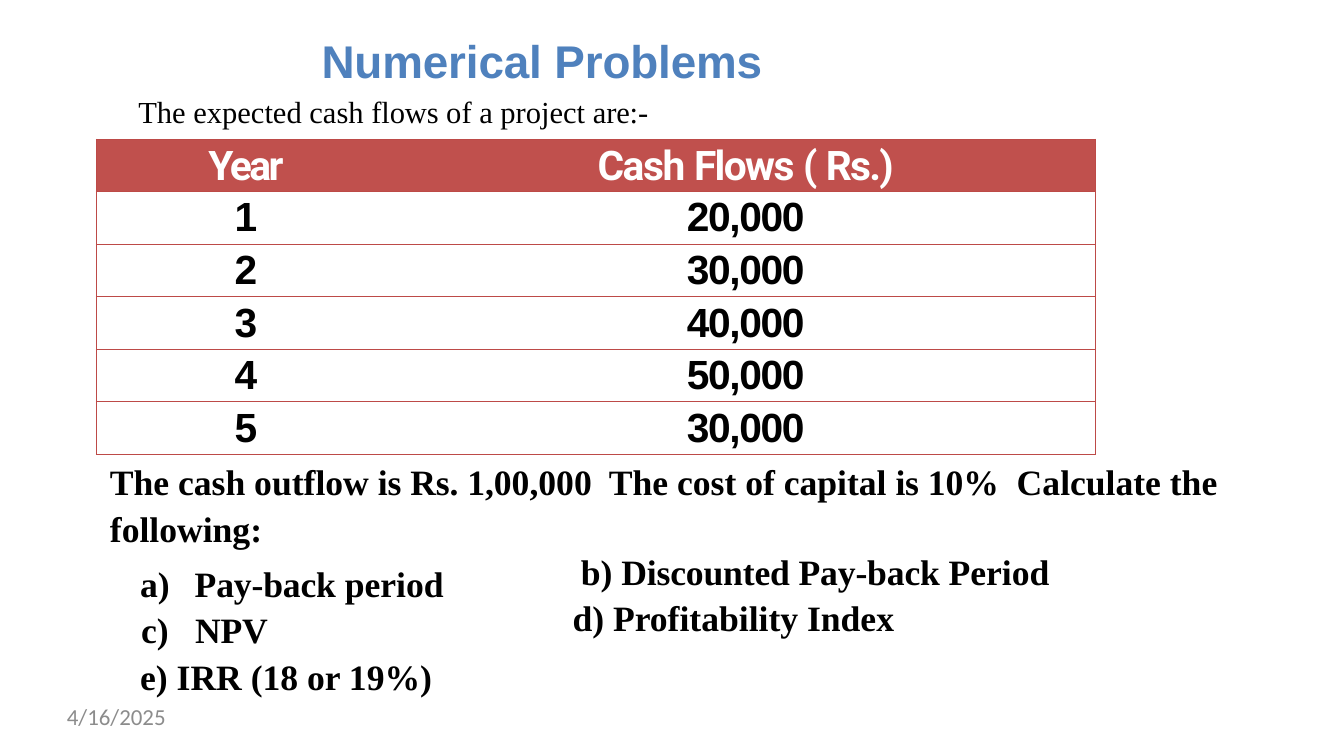
from lxml import etree
from pptx import Presentation
from pptx import util as u
from pptx.dml.color import RGBColor
from pptx.enum import text
from pptx.oxml.ns import qn

PX = 9144
COLORS = {"title": "4F81BD", "ink": "000000", "date": "8C8C8C",
          "header": "C0504D", "header_text": "FFFFFF", "rule": "BD4A47"}
SERIF = "Times New Roman"


def px(length):
    """Turn px into EMU."""
    return u.Emu(length * PX)


def add_runs(paragraph, runs, size, font, color, bold=True):
    """Add (wording, letter spacing) runs in one style."""
    for wording, spacing in runs:
        run = paragraph.add_run()
        run.text = wording
        run.font.size = u.Pt(size)
        run.font.name = font
        run.font.bold = bold
        run.font.color.rgb = RGBColor.from_string(COLORS[color])
        if spacing:
            run._r.get_or_add_rPr().set("spc", str(round(spacing * 100)))


def add_frame(slide, box, top_inset=1):
    """Add a wrapping text frame in a box and return it."""
    frame = slide.shapes.add_textbox(*map(px, box)).text_frame
    frame.word_wrap = True
    frame.margin_left = frame.margin_right = frame.margin_bottom = 0
    frame.margin_top = px(top_inset)
    return frame


def add_line(slide, box, runs, size=28, font=SERIF, color="ink", bold=True,
             line_spacing=None):
    """Place one paragraph in a box."""
    paragraph = add_frame(slide, box).paragraphs[0]
    paragraph.space_before = u.Pt(1)
    paragraph.line_spacing = line_spacing
    paragraph._p.get_or_add_pPr().set("marL", str(px(1)))
    add_runs(paragraph, runs, size, font, color, bold)


def add_tasks(slide, box):
    """Place the left column of lettered tasks."""
    frame = add_frame(slide, box, 5)
    tasks = [([("a)\t", 0), (" Pay-back ", -0.1), ("period", 0)], 3.9, 1, 0, 56),
             ([("NPV", -0.1)], 2.9, 61, -59, 61),
             ([("e) IRR (18 or 19%)", 0)], 2.9, 1, 0, 63)]
    for index, (runs, before, margin, indent, tab) in enumerate(tasks):
        task = frame.add_paragraph() if index else frame.paragraphs[0]
        task.space_before = u.Pt(before)
        props = task._p.get_or_add_pPr()
        props.set("marL", str(px(margin)))
        props.set("indent", str(px(indent)))
        if indent:
            etree.SubElement(props, qn("a:buFont"), typeface="+mj-lt")
            etree.SubElement(props, qn("a:buAutoNum"), type="alphaLcParenR", startAt="3")
        tabs = etree.SubElement(props, qn("a:tabLst"))
        etree.SubElement(tabs, qn("a:tab"), pos=str(px(tab)), algn="l")
        add_runs(task, runs, 28, SERIF, "ink")


def set_borders(cell, visible):
    """Rule the visible sides of a cell and clear the others."""
    props = cell._tc.get_or_add_tcPr()
    for index, side in enumerate("LRTB"):
        line = etree.Element(qn(f"a:ln{side}"), w=str(u.Pt(0.75)))
        if side in visible:
            fill = etree.SubElement(line, qn("a:solidFill"))
            etree.SubElement(fill, qn("a:srgbClr"), val=COLORS["rule"])
        else:
            etree.SubElement(line, qn("a:noFill"))
        props.insert(index, line)


def add_cash_flows(slide, box):
    """Place the table of yearly cash flows."""
    header = [[("Year", -2)],
              [("Cash ", -1.2), ("Flows ", -1.3), ("( ", -1.2), ("Rs.)", -1.4)]]
    flows = ["20,000", "30,000", "40,000", "50,000", "30,000"]
    rows = [header] + [[[(str(year), 0)], [(flow, -1.1)]]
                       for year, flow in enumerate(flows, 1)]
    table = slide.shapes.add_table(len(rows), 2, *map(px, box)).table
    table.first_row = table.horz_banding = False
    year_width = 327
    table.columns[0].width = px(year_width)
    table.columns[1].width = px(box[2] - year_width)
    for row, contents in enumerate(rows):
        table.rows[row].height = px(box[3] // len(rows))
        for column, runs in enumerate(contents):
            cell = table.cell(row, column)
            cell.margin_left = cell.margin_right = cell.margin_bottom = 0
            cell.margin_top = px(3 if row == 1 else 4)
            paragraph = cell.text_frame.paragraphs[0]
            paragraph.alignment = text.PP_ALIGN.CENTER
            paragraph.space_before = u.Pt({0: 3, 1: 2.2}.get(row, 2.6))
            if row:
                cell.fill.background()
                add_runs(paragraph, runs, 32, "Arial", "ink")
            else:
                cell.fill.solid()
                cell.fill.fore_color.rgb = RGBColor.from_string(COLORS["header"])
                add_runs(paragraph, runs, 32, "Roboto", "header_text")
            set_borders(cell, "TB" + "LR"[column])


def add_problem(slide):
    """Place the whole numerical problem on a slide."""
    add_line(slide, (350, 35, 967, 62), [("Numerical Problems", -0.1)],
             36, "Arial", "title")
    add_line(slide, (150, 101, 561, 43),
             [("The expected cash ", 0), ("flows ", -0.1), ("of a project ", 0),
              ("are:-", -0.1)], 24, bold=False)
    add_cash_flows(slide, (105, 152, 1091, 342))
    add_line(slide, (119, 496, 1228, 101),
             [("The cash outflow is ", 0), ("Rs. ", -0.1),
              ("1,00,000  The cost of capital ", 0), ("is ", -0.1),
              ("10%  Calculate the following:", 0)], line_spacing=1.1)
    add_tasks(slide, (152, 608, 431, 155))
    add_line(slide, (633, 599, 784, 49),
             [("b) ", 0), ("Discounted Pay-back ", -0.1), ("Period", 0)])
    add_line(slide, (624, 649, 577, 49), [("d) Profitability Index", 0)])
    date = add_frame(slide, (73, 767, 337, 30), 0).paragraphs[0]
    add_runs(date, [("4/16/2025", 0)], 18, "Calibri", "date", False)


def main():
    """Build and save the slide."""
    deck = Presentation()
    deck.slide_width, deck.slide_height = px(1467), px(825)
    add_problem(deck.slides.add_slide(deck.slide_layouts[6]))
    deck.save("out.pptx")


if __name__ == "__main__":
    main()
